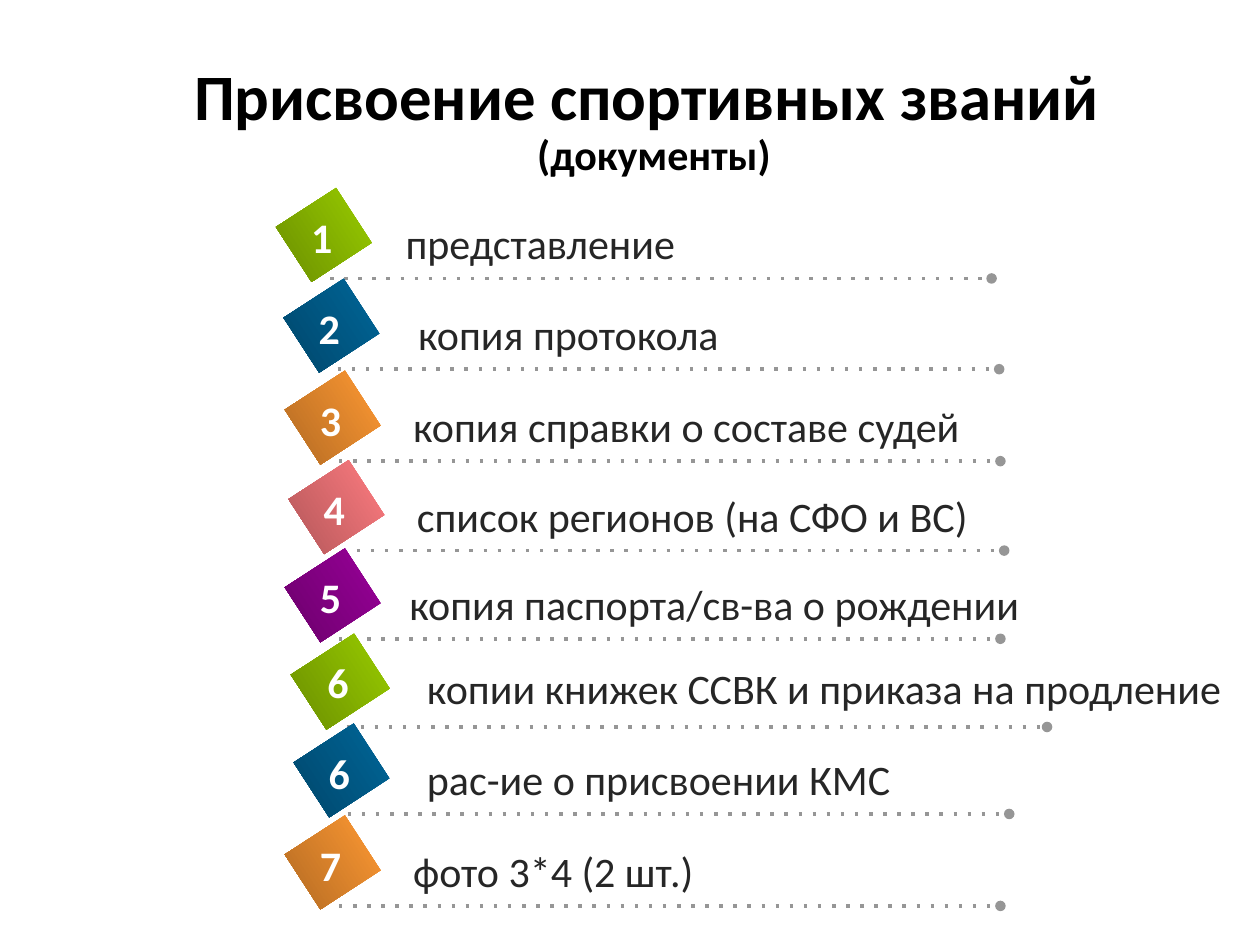
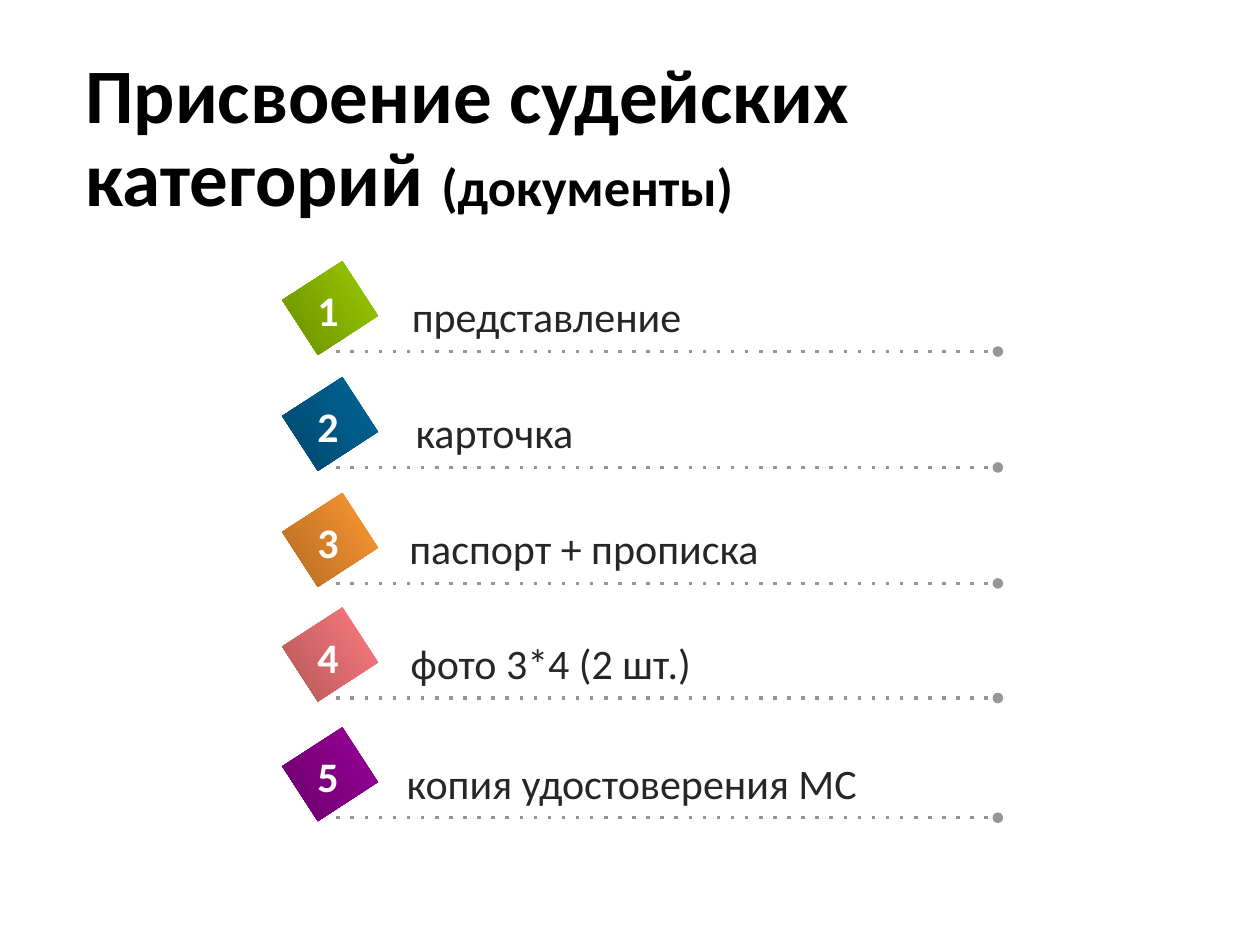
from dataclasses import dataclass

from lxml.etree import SubElement
from pptx import Presentation
from pptx.dml.color import RGBColor
from pptx.enum.shapes import MSO_CONNECTOR, MSO_SHAPE
from pptx.enum.text import MSO_ANCHOR, MSO_AUTO_SIZE, PP_ALIGN
from pptx.oxml.ns import qn
from pptx.shapes.shapetree import GroupShapes
from pptx.slide import Slide
from pptx.text.text import Font
from pptx.util import Pt

PX = 9144
FONT = "Calibri"
COLORS = {"title": "000000", "label": "262626", "number": "FFFFFF", "line": "969696"}
GRADIENTS = {
    "green": ("99CC00", "6B8F00"),
    "blue": ("006699", "00476B"),
    "orange": ("FF9933", "B36B23"),
    "pink": ("FF7C80", "B3575A"),
    "purple": ("990099", "6B006B"),
}
HANGING = 38


@dataclass(frozen=True)
class Title:
    """Heading with a smaller second part."""

    box: tuple[int, int, int, int]
    main: str
    main_size: int
    note_size: int
    align: PP_ALIGN
    note: str = "(документы)"


@dataclass(frozen=True)
class Item:
    """Numbered document; x and y place its badge."""

    number: str
    text: str
    color: str
    x: int
    y: int
    label_x: int
    label_w: int
    hanging: bool = False
    badge_h: int = 57
    line_w: int = 525
    number_w: int = 39


def px(*lengths: int) -> list[int]:
    """Convert px to EMU."""
    return [length * PX for length in lengths]


def style(font: Font, size: int, color: str, bold: bool) -> None:
    """Set the face, size and colour of a run."""
    font.name, font.size, font.bold = FONT, Pt(size), bold
    font.color.rgb = RGBColor.from_string(COLORS[color])


def add_title(s: Slide, title: Title) -> None:
    """Draw the slide heading."""
    tf = s.shapes.add_textbox(*px(*title.box)).text_frame
    tf.word_wrap = True
    tf.vertical_anchor = MSO_ANCHOR.MIDDLE
    p = tf.paragraphs[0]
    p.text = title.main
    p.alignment, p.line_spacing = title.align, 0.9
    p.add_run().text = title.note
    for r, size in zip(p.runs, (title.main_size, title.note_size)):
        style(r.font, size, "title", True)


def add_text(shapes: GroupShapes, box: tuple[int, int, int, int], text: str,
             color: str, bold: bool = False, hanging: bool = False) -> None:
    """Draw one line of 24 pt text."""
    tf = shapes.add_textbox(*px(*box)).text_frame
    tf.word_wrap = True
    tf.auto_size = MSO_AUTO_SIZE.SHAPE_TO_FIT_TEXT
    p = tf.paragraphs[0]
    p.text = text
    if hanging:
        pPr = p._p.get_or_add_pPr()
        pPr.set("marL", str(HANGING * PX))
        pPr.set("indent", str(-HANGING * PX))
    style(p.runs[0].font, 24, color, bold)


def add_dotted_line(shapes: GroupShapes, x: int, y: int, width: int) -> None:
    """Draw a dotted rule that ends in a round dot."""
    line = shapes.add_connector(MSO_CONNECTOR.STRAIGHT, *px(x, y, x + width, y))
    line.line.width = Pt(2)
    line.line.color.rgb = RGBColor.from_string(COLORS["line"])
    spPr = line.element.spPr
    ln = spPr.find(qn("a:ln"))
    SubElement(ln, qn("a:prstDash"), val="dot")
    SubElement(ln, qn("a:tailEnd"), type="oval")
    SubElement(spPr, qn("a:effectLst"))


def add_badge(shapes: GroupShapes, item: Item) -> None:
    """Draw the tilted gradient badge."""
    sp = shapes.add_shape(MSO_SHAPE.RECTANGLE, *px(item.x, item.y, 52, item.badge_h))
    sp.rotation = 57
    sp.shadow.inherit = False
    sp.line.fill.background()
    sp.fill.gradient()
    sp.fill.gradient_angle = 270
    for stop, color in zip(sp.fill.gradient_stops, GRADIENTS[item.color]):
        stop.color.rgb = RGBColor.from_string(color)


def add_item(s: Slide, item: Item) -> None:
    """Draw a rule, badge, label and number as one group."""
    shapes = s.shapes.add_group_shape().shapes
    add_dotted_line(shapes, item.x + 31, item.y + item.badge_h + 6, item.line_w)
    add_badge(shapes, item)
    add_text(shapes, (item.label_x, item.y + 10, item.label_w, 51),
             item.text, "label", hanging=item.hanging)
    add_text(shapes, (item.x + 6, item.y + 5, item.number_w, 50),
             item.number, "number", bold=True)


SLIDES = [
    (
        Title((85, 43, 868, 108), "Присвоение спортивных званий \v", 37, 24, PP_ALIGN.CENTER),
        [
            Item("1", "представление", "green", 231, 158, 312, 638, True),
            Item("2", "копия протокола", "blue", 237, 230, 322, 615, True),
            Item("3", "копия справки о составе судей", "orange", 238, 303, 318, 682),
            Item("4", "список регионов (на СФО и ВС)", "pink", 241, 374, 321, 488),
            Item("5", "копия паспорта/св-ва о рождении", "purple", 238, 444, 315, 556),
            Item("6", "копии книжек ССВК и приказа на продление", "green", 244, 511, 329, 662,
                 True, badge_h=60, line_w=556, number_w=55),
            Item("6", "рас-ие о присвоении КМС", "blue", 245, 583, 329, 615, True, number_w=37),
            Item("7", "фото 3*4 (2 шт.)", "orange", 238, 656, 318, 682, number_w=37),
        ],
    ),
    (
        Title((58, 49, 868, 124), "Присвоение судейских категорий ", 44, 30, PP_ALIGN.LEFT),
        [
            Item("1", "представление", "green", 236, 216, 317, 638, True),
            Item("2", "карточка", "blue", 236, 308, 320, 615, True),
            Item("3", "паспорт + прописка", "orange", 236, 400, 315, 682),
            Item("4", "фото 3*4 (2 шт.)", "pink", 236, 491, 316, 488),
            Item("5", "копия удостоверения МС", "purple", 236, 586, 313, 556),
        ],
    ),
]


def main() -> None:
    """Build and save the presentation."""
    prs = Presentation()
    prs.slide_width, prs.slide_height = px(1000, 750)
    for title, items in SLIDES:
        s = prs.slides.add_slide(prs.slide_layouts[6])
        add_title(s, title)
        for item in items:
            add_item(s, item)
    prs.save("out.pptx")


if __name__ == "__main__":
    main()
